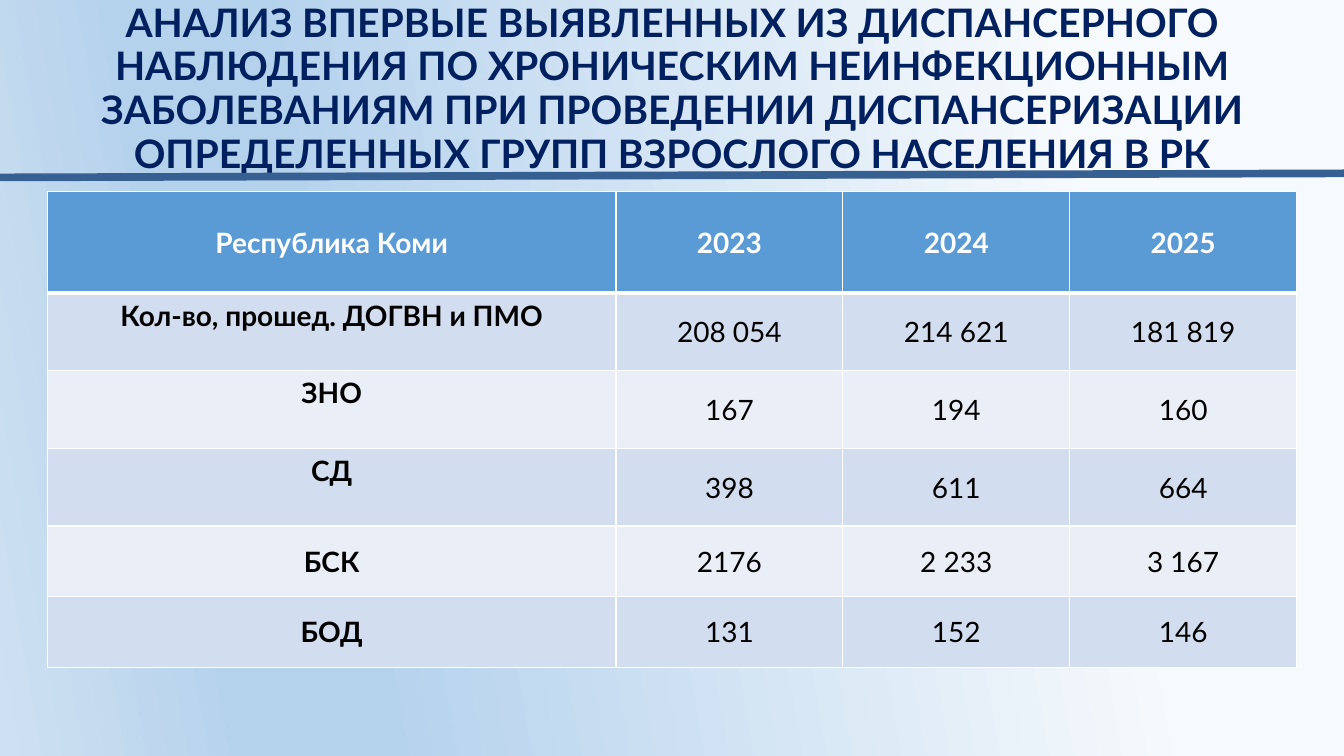
import pptx
import pptx.util
from dataclasses import dataclass
from lxml import etree
from pptx.dml.color import RGBColor
from pptx.enum.shapes import MSO_CONNECTOR
from pptx.enum.text import MSO_ANCHOR, PP_ALIGN
from pptx.oxml.ns import qn

HEADING = ("АНАЛИЗ ВПЕРВЫЕ ВЫЯВЛЕННЫХ ИЗ ДИСПАНСЕРНОГО НАБЛЮДЕНИЯ ПО ХРОНИЧЕСКИМ "
           "НЕИНФЕКЦИОННЫМ ЗАБОЛЕВАНИЯМ ПРИ ПРОВЕДЕНИИ ДИСПАНСЕРИЗАЦИИ "
           "ОПРЕДЕЛЕННЫХ ГРУПП ВЗРОСЛОГО НАСЕЛЕНИЯ В РК")
FINDINGS = [
    ("Республика Коми", "2023", "2024", "2025"),
    ("Кол-во, прошед. ДОГВН и ПМО", "208 054", "214 621", "181 819"),
    ("ЗНО", "167", "194", "160"),
    ("СД", "398", "611", "664"),
    ("БСК", "2176", "2 233", "3 167"),
    ("БОД", "131", "152", "146"),
]
TOP_LABEL_ROWS = (1, 2, 3)


@dataclass(frozen=True)
class Theme:
    font: str = "Lato"
    heading: str = "002060"
    rule: str = "376092"
    header: str = "5B9BD5"
    bands: tuple = ("EAEFF7", "D2DEEF")
    light: str = "FFFFFF"
    dark: str = "000000"
    backdrop: tuple = ((19, "F7FAFD"), (74, "B5D2EC"), (83, "B5D2EC"), (100, "CEE1F2"))
    backdrop_angle: int = 170
    heading_size: int = 28
    table_size: int = 20
    rule_width: float = 5.5


THEME = Theme()
WIDTH, HEIGHT = 13.33, 7.5
MARGIN = 0.47
COLUMNS = (5.64, 2.25, 2.25, 2.25)
ROWS = (1.01, 0.77, 0.77, 0.77, 0.7, 0.7)
TABLE_TOP = 1.9


def inches(*lengths):
    return [pptx.util.Inches(length) for length in lengths]


def write(frame, text, *, size, color, bold=False, spacing=None):
    paragraph = frame.paragraphs[0]
    paragraph.alignment = PP_ALIGN.CENTER
    if spacing:
        paragraph.line_spacing = spacing
    run = paragraph.add_run()
    run.text = text
    run.font.name = THEME.font
    run.font.size = pptx.util.Pt(size)
    run.font.bold = bold
    run.font.color.rgb = RGBColor.from_string(color)


def add_solid(parent, color):
    solid = etree.SubElement(parent, qn("a:solidFill"))
    etree.SubElement(solid, qn("a:srgbClr"), val=color)


def set_borders(cell, **widths):
    """Draw the left, right, top and bottom edges, in points."""
    properties = cell._tc.get_or_add_tcPr()
    for side in "LRTB":
        width = pptx.util.Pt(widths.get(side, 1))
        edge = etree.SubElement(properties, qn(f"a:ln{side}"), w=str(width))
        add_solid(edge, THEME.light)


def paint_background(slide):
    fill = slide.background.fill
    fill.gradient()
    gradient = slide._element.find(".//" + qn("a:gradFill"))
    stops = gradient.find(qn("a:gsLst"))
    for stop in list(stops):
        stops.remove(stop)
    for position, color in THEME.backdrop:
        stop = etree.SubElement(stops, qn("a:gs"), pos=str(position * 1000))
        etree.SubElement(stop, qn("a:srgbClr"), val=color)
    # python-pptx measures the angle counter-clockwise
    fill.gradient_angle = 360 - THEME.backdrop_angle


def add_findings(slide):
    table = slide.shapes.add_table(
        len(ROWS), len(COLUMNS),
        *inches(MARGIN, TABLE_TOP, sum(COLUMNS), sum(ROWS))).table
    for column, width in zip(table.columns, inches(*COLUMNS)):
        column.width = width
    for row, height in zip(table.rows, inches(*ROWS)):
        row.height = height
    for r, values in enumerate(FINDINGS):
        is_header = r == 0
        for c, value in enumerate(values):
            cell = table.cell(r, c)
            set_borders(cell, T=3 if r == 1 else 1, B=3 if is_header else 1)
            cell.fill.solid()
            cell.fill.fore_color.rgb = RGBColor.from_string(
                THEME.header if is_header else THEME.bands[r % 2])
            raised = c == 0 and r in TOP_LABEL_ROWS
            cell.vertical_anchor = MSO_ANCHOR.TOP if raised else MSO_ANCHOR.MIDDLE
            write(cell.text_frame, value, size=THEME.table_size,
                  color=THEME.light if is_header else THEME.dark,
                  bold=is_header or c == 0)


def add_heading(slide):
    frame = slide.shapes.add_textbox(
        *inches(MARGIN, 0.18, WIDTH - 2 * MARGIN, 1.41)).text_frame
    frame.word_wrap = True
    frame.vertical_anchor = MSO_ANCHOR.MIDDLE
    frame.margin_left = frame.margin_right = frame.margin_bottom = 0
    frame.margin_top = pptx.util.Inches(0.01)
    write(frame, HEADING, size=THEME.heading_size, color=THEME.heading,
          bold=True, spacing=0.93)


def add_rule(slide):
    rule = slide.shapes.add_connector(
        MSO_CONNECTOR.STRAIGHT, *inches(0, 1.76, WIDTH, 1.72))
    rule.line.color.rgb = RGBColor.from_string(THEME.rule)
    rule.line.width = pptx.util.Pt(THEME.rule_width)
    etree.SubElement(rule._element.spPr, qn("a:effectLst"))


def main():
    deck = pptx.Presentation()
    deck.slide_width, deck.slide_height = inches(WIDTH, HEIGHT)
    slide = deck.slides.add_slide(deck.slide_layouts[6])
    paint_background(slide)
    add_findings(slide)
    add_heading(slide)
    add_rule(slide)
    deck.save("out.pptx")


if __name__ == "__main__":
    main()
